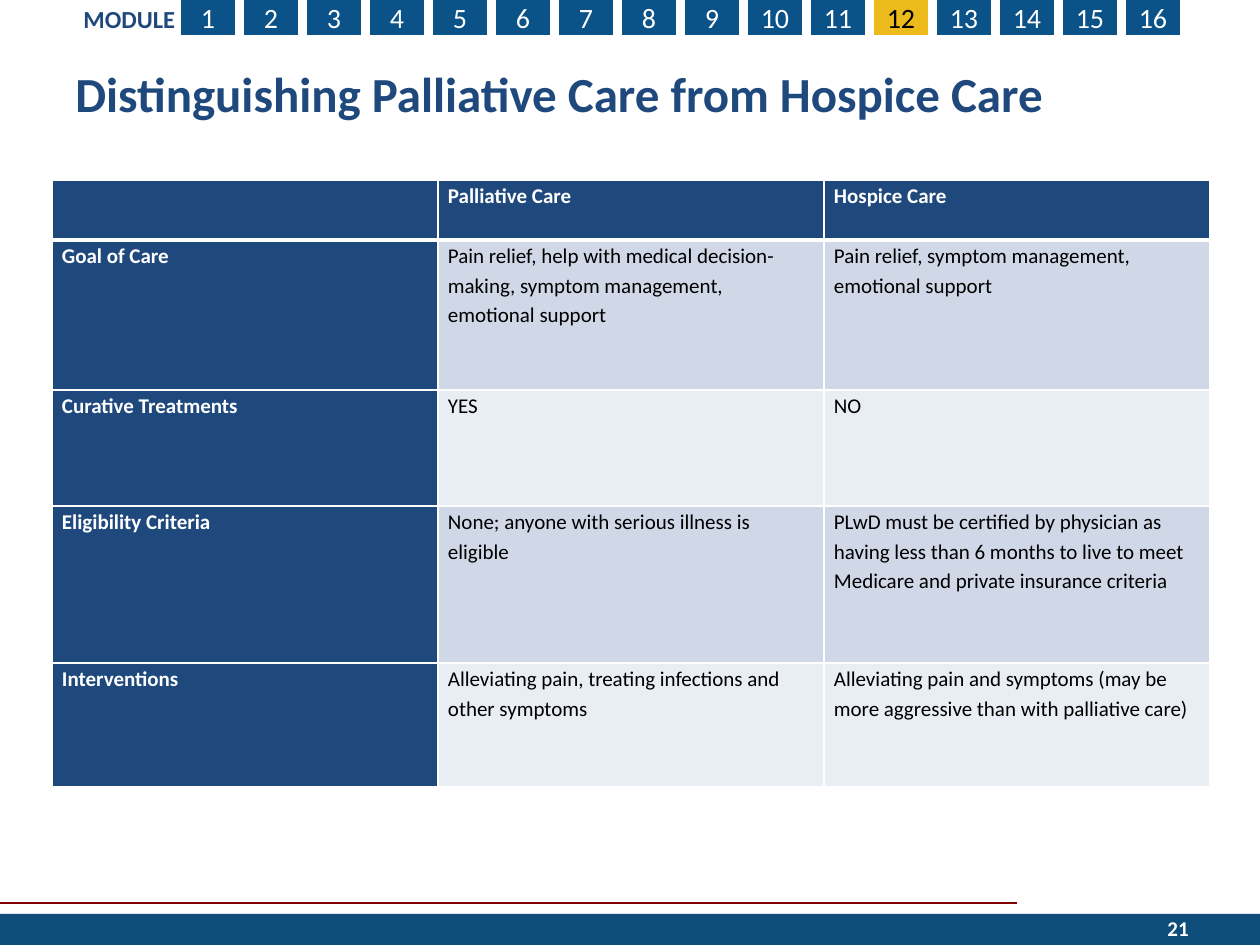
import pptx
import pptx.util
import pptx.dml.color
import pptx.enum.shapes
import pptx.enum.text
import pptx.oxml
import pptx.oxml.ns

SCALE = 914400 / 126
FONT = "Calibri"
COLORS = {
    "navy": "1F497D",
    "tab": "0A5287",
    "active": "ECBA1A",
    "footer": "0F4D7B",
    "rule": "800000",
    "band_dark": "D0D8E8",
    "band_light": "E9EDF4",
    "white": "FFFFFF",
    "black": "000000",
}
ALIGN = pptx.enum.text.PP_ALIGN
ANCHOR = pptx.enum.text.MSO_ANCHOR
ROWS = [
    ("", "Palliative Care", "Hospice Care"),
    (
        "Goal of Care",
        "Pain relief, help with medical decision-making, symptom management, emotional support",
        "Pain relief, symptom management, emotional support",
    ),
    ("Curative Treatments", "YES", "NO"),
    (
        "Eligibility Criteria",
        "None; anyone with serious illness is eligible",
        "PLwD must be certified by physician as having less than 6 months to live "
        "to meet Medicare and private insurance criteria",
    ),
    (
        "Interventions",
        "Alleviating pain, treating infections and other symptoms",
        "Alleviating pain and symptoms (may be more aggressive than with palliative care)",
    ),
]
ROW_HEIGHTS = [60, 150, 116, 157, 124]
COLUMN_WIDTH = 386


def emu(px):
    return pptx.util.Emu(round(px * SCALE))


def rgb(name):
    return pptx.dml.color.RGBColor.from_string(COLORS[name])


def set_text(tf, text, size, color, bold=False, align=ALIGN.LEFT):
    p = tf.paragraphs[0]
    p.text = text
    p.alignment = align
    p.font.name = FONT
    p.font.size = pptx.util.Pt(size)
    p.font.bold = bold
    p.font.color.rgb = rgb(color)
    return p


def add_rect(slide, box, fill):
    sp = slide.shapes.add_shape(
        pptx.enum.shapes.MSO_SHAPE.RECTANGLE, *map(emu, box)
    )
    sp.shadow.inherit = False
    sp.fill.solid()
    sp.fill.fore_color.rgb = rgb(fill)
    sp.line.fill.background()
    return sp


def add_label(slide, box, text, size, color, align=ALIGN.LEFT, anchor=ANCHOR.MIDDLE):
    tf = slide.shapes.add_textbox(*map(emu, box)).text_frame
    tf.word_wrap = True
    tf.vertical_anchor = anchor
    set_text(tf, text, size, color, True, align)


def add_rule(slide, x1, x2, y):
    line = slide.shapes.add_connector(
        pptx.enum.shapes.MSO_CONNECTOR.STRAIGHT, emu(x1), emu(y), emu(x2), emu(y)
    )
    line.line.color.rgb = rgb("rule")
    line.line.width = pptx.util.Pt(1.5)
    effects = pptx.oxml.parse_xml(
        f'<a:effectLst {pptx.oxml.ns.nsdecls("a")}/>'
    )
    line._element.spPr.append(effects)


def add_module_tabs(slide, active):
    for i in range(16):
        current = i + 1 == active
        tab = add_rect(slide, (181 + 63 * i, 0, 54, 35), "active" if current else "tab")
        tf = tab.text_frame
        tf.margin_left = tf.margin_right = 0
        tf.vertical_anchor = ANCHOR.MIDDLE
        set_text(tf, str(i + 1), 16, "black" if current else "white", align=ALIGN.CENTER)


def set_borders(cell, top, bottom):
    tcPr = cell._tc.get_or_add_tcPr()
    for side, width in (("L", 1), ("R", 1), ("T", top), ("B", bottom)):
        tcPr.append(pptx.oxml.parse_xml(
            f'<a:ln{side} {pptx.oxml.ns.nsdecls("a")} w="{pptx.util.Pt(width)}">'
            f'<a:solidFill><a:srgbClr val="{COLORS["white"]}"/></a:solidFill></a:ln{side}>'
        ))


def fill_cell(cell, text, row, col):
    heading = row == 0 or col == 0
    cell.margin_left = cell.margin_right = emu(10)
    cell.margin_top = cell.margin_bottom = 0
    set_borders(cell, 3 if row == 1 else 1, 3 if row == 0 else 1)
    cell.fill.solid()
    band = "band_dark" if row % 2 else "band_light"
    cell.fill.fore_color.rgb = rgb("navy" if heading else band)
    p = set_text(cell.text_frame, text, 12, "white" if heading else "black", heading)
    p.line_spacing = 1.15


def add_comparison(slide):
    columns = len(ROWS[0])
    table = slide.shapes.add_table(
        len(ROWS), columns, emu(52), emu(180),
        emu(COLUMN_WIDTH * columns), emu(sum(ROW_HEIGHTS)),
    ).table
    for column in table.columns:
        column.width = emu(COLUMN_WIDTH)
    for r, texts in enumerate(ROWS):
        table.rows[r].height = emu(ROW_HEIGHTS[r])
        for c, text in enumerate(texts):
            fill_cell(table.cell(r, c), text, r, c)


def main():
    prs = pptx.Presentation()
    prs.slide_width = emu(1260)
    prs.slide_height = emu(945)
    slide = prs.slides.add_slide(prs.slide_layouts[6])
    add_rule(slide, -1, 1017, 903)
    add_rect(slide, (0, 914, 1260, 31), "footer")
    add_module_tabs(slide, active=12)
    add_label(slide, (71, -2, 127, 43), "MODULE", 14, "navy", anchor=ANCHOR.TOP)
    add_label(slide, (907, 903, 294, 50), "21", 12, "white", ALIGN.RIGHT)
    add_label(slide, (63, 48, 1134, 90),
              "Distinguishing Palliative Care from Hospice Care", 28, "navy")
    add_comparison(slide)
    prs.save("out.pptx")


if __name__ == "__main__":
    main()
